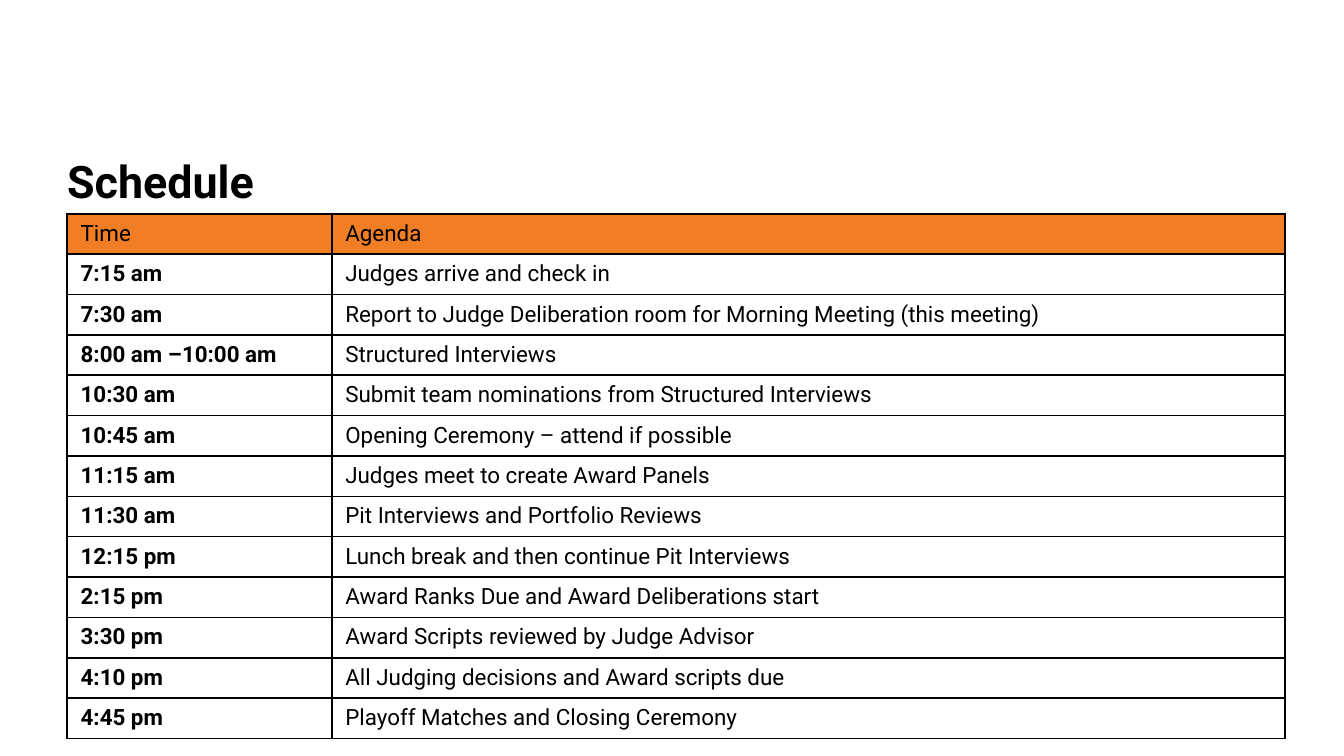
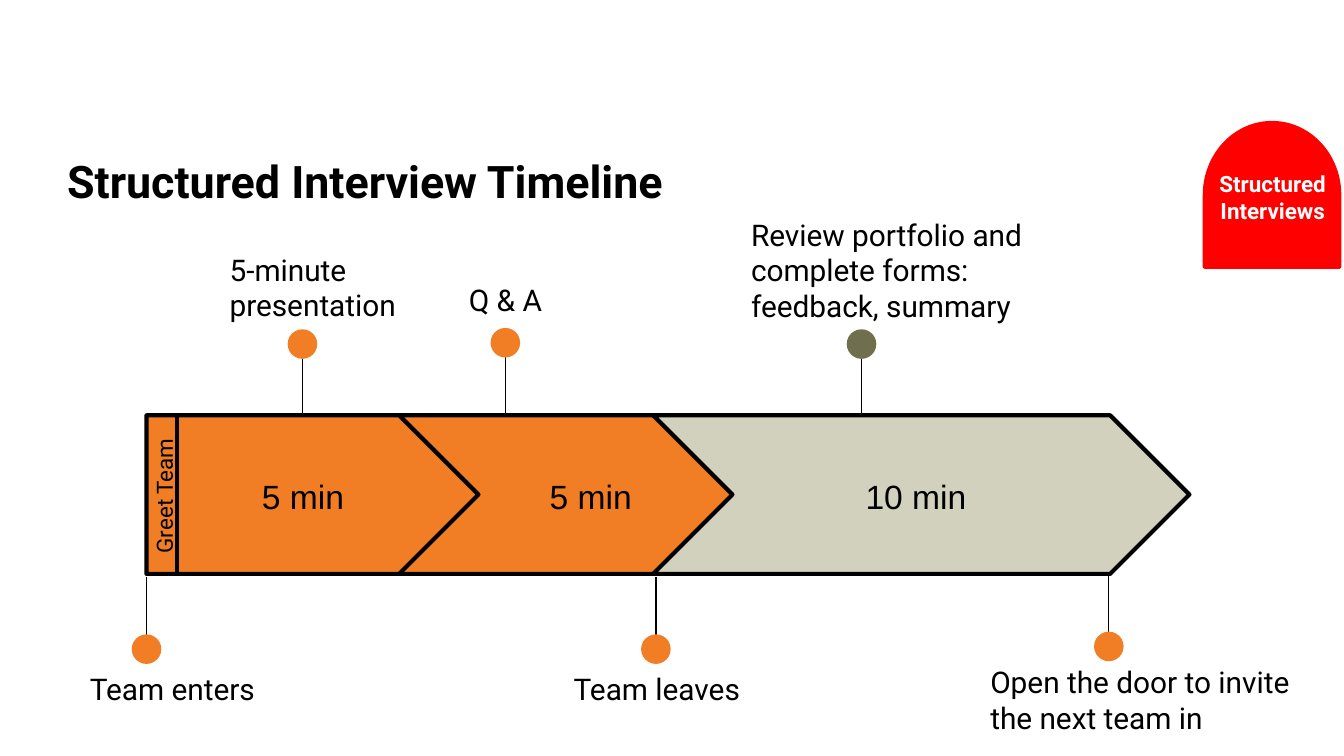
from lxml import etree
from pptx import Presentation
from pptx.dml.color import RGBColor
from pptx.enum.shapes import MSO_CONNECTOR, MSO_SHAPE
from pptx.enum.text import MSO_ANCHOR, PP_ALIGN
from pptx.oxml.ns import qn
from pptx.util import Inches, Pt

BLACK = RGBColor(0x00, 0x00, 0x00)
WHITE = RGBColor(0xFF, 0xFF, 0xFF)
ORANGE = RGBColor(0xF1, 0x7E, 0x25)
STONE = RGBColor(0xD2, 0xD1, 0xBE)
OLIVE = RGBColor(0x6F, 0x6F, 0x4E)
RED = RGBColor(0xFF, 0x00, 0x00)

STRAIGHT = MSO_CONNECTOR.STRAIGHT
CHEVRON, PENTAGON = MSO_SHAPE.CHEVRON, MSO_SHAPE.PENTAGON
OVAL, DELAY = MSO_SHAPE.OVAL, MSO_SHAPE.FLOWCHART_DELAY
LEFT, CENTER = PP_ALIGN.LEFT, PP_ALIGN.CENTER
TOP, MIDDLE = MSO_ANCHOR.TOP, MSO_ANCHOR.MIDDLE

COLS, ROWS = 100, 56.25  # grid cells are a tenth of an inch square
CELL = Inches(0.1)

AGENDA = [
    ("Time", "Agenda"),
    ("7:15 am", "Judges arrive and check in"),
    ("7:30 am", "Report to Judge Deliberation room for Morning Meeting (this meeting)"),
    ("8:00 am –10:00 am", "Structured Interviews"),
    ("10:30 am", "Submit team nominations from Structured Interviews"),
    ("10:45 am", "Opening Ceremony – attend if possible"),
    ("11:15 am", "Judges meet to create Award Panels"),
    ("11:30 am", "Pit Interviews and Portfolio Reviews"),
    ("12:15 pm", "Lunch break and then continue Pit Interviews"),
    ("2:15 pm", "Award Ranks Due and Award Deliberations start"),
    ("3:30 pm", "Award Scripts reviewed by Judge Advisor"),
    ("4:10 pm", "All Judging decisions and Award scripts due"),
    ("4:45 pm", "Playoff Matches and Closing Ceremony"),
]
AGENDA_HEIGHTS = [2.2] * 3 + [2.7, 2.5] + [2.2] * 8

BAR_TOP, BAR_HEIGHT = 30.9, 11.8
# shape, left, width, fill
PHASES = [
    (CHEVRON, 29.1, 25.5, ORANGE),
    (PENTAGON, 10.9, 24.7, ORANGE),
    (CHEVRON, 48.6, 39.9, STONE),
]
# left, text
DURATIONS = [(15.1, "5 min"), (36.5, "5 min"), (60.7, "10 min")]

DOWN, UP = 1, -1
# dot centre x and y, direction of its stem, colour
MARKERS = [
    (10.9, 48.3, UP, ORANGE),
    (22.5, 25.6, DOWN, ORANGE),
    (37.6, 25.5, DOWN, ORANGE),
    (48.8, 48.3, UP, ORANGE),
    (82.5, 48.1, UP, ORANGE),
    (64.1, 25.6, DOWN, OLIVE),
]
# text, left, top, width, height
LABELS = [
    ("5-minute presentation", 16.1, 18.2, 16.2, 9.1),
    ("Team enters", 5.7, 49.4, 16.2, 6.4),
    ("Q & A", 33.9, 20.5, 8.3, 6.4),
    ("Team leaves", 41.7, 49.4, 16.2, 6.4),
    ("Review portfolio and complete forms: feedback, summary", 54.9, 15.6, 23.6, 9.1),
    ("Open the door to invite the next team in", 72.7, 48.9, 24.3, 6.4),
]


def grid(*cells):
    return [round(c * CELL) for c in cells]


def write(tf, text, size=12, font="Roboto", color=BLACK, bold=False, align=LEFT):
    p = tf.paragraphs[0]
    p.alignment = align
    r = p.add_run()
    r.text = text
    r.font.size = Pt(size)
    r.font.name = font
    r.font.bold = bold
    r.font.color.rgb = color


def border(cell, width=1, color=BLACK):
    tc_pr = cell._tc.get_or_add_tcPr()
    for i, side in enumerate(("lnL", "lnR", "lnT", "lnB")):
        ln = etree.Element(qn(f"a:{side}"), w=str(Pt(width)))
        fill = etree.SubElement(ln, qn("a:solidFill"))
        etree.SubElement(fill, qn("a:srgbClr"), val=str(color))
        tc_pr.insert(i, ln)


class Deck:
    def __init__(self):
        self.prs = Presentation()
        self.prs.slide_width, self.prs.slide_height = grid(COLS, ROWS)
        self.s = None

    def slide(self, title):
        self.s = self.prs.slides.add_slide(self.prs.slide_layouts[6])
        self.text(title, 5, 10.4, 90.7, 6.1, inset=False, anchor=MIDDLE,
                  size=24, bold=True)

    def text(self, text, x, y, w, h, inset=True, anchor=TOP, rotation=0, **style):
        box = self.s.shapes.add_textbox(*grid(x, y, w, h))
        box.rotation = rotation
        tf = box.text_frame
        tf.word_wrap = True
        tf.vertical_anchor = anchor
        if not inset:
            tf.margin_left = tf.margin_right = tf.margin_top = tf.margin_bottom = 0
        write(tf, text, **style)

    def shape(self, kind, x, y, w, h, fill, line=None, rotation=0):
        sp = self.s.shapes.add_shape(kind, *grid(x, y, w, h))
        sp.shadow.inherit = False
        sp.rotation = rotation
        sp.fill.solid()
        sp.fill.fore_color.rgb = fill
        if line is None:
            sp.line.fill.background()
        else:
            sp.line.color.rgb = line
            sp.line.width = Pt(2.25)

    def line(self, x1, y1, x2, y2, width=0.75):
        c = self.s.shapes.add_connector(STRAIGHT, *grid(x1, y1, x2, y2))
        c.line.color.rgb = BLACK
        c.line.width = Pt(width)
        etree.SubElement(c._element.spPr, qn("a:effectLst"))

    def marker(self, x, y, direction, color, dot=2.2, stem=6):
        """Draw a dot with a stem that runs towards the bar."""
        start = y - direction * 0.65
        self.line(x, start, x, start + direction * stem)
        self.shape(OVAL, x - dot / 2, y - dot / 2, dot, dot, color)

    def table(self, rows, x, y, widths, heights, frame_height):
        """Draw a table with a filled header and a bold first column."""
        frame = self.s.shapes.add_table(
            len(rows), len(widths), *grid(x, y, sum(widths), frame_height))
        table = frame.table
        table.first_row = table.horz_banding = False
        for column, width in zip(table.columns, grid(*widths)):
            column.width = width
        for row, height in zip(table.rows, grid(*heights)):
            row.height = height
        frame.height = grid(frame_height)[0]
        for i, row in enumerate(rows):
            for j, text in enumerate(row):
                cell = table.cell(i, j)
                if i == 0:
                    cell.fill.solid()
                    cell.fill.fore_color.rgb = ORANGE
                else:
                    cell.fill.background()
                border(cell)
                write(cell.text_frame, text, bold=i > 0 and j == 0)


def schedule(deck):
    deck.slide("Schedule")
    deck.table(AGENDA, 5, 15.9, (19.7, 70.9), AGENDA_HEIGHTS, 39)


def timeline(deck):
    deck.slide("Structured Interview Timeline")
    for kind, x, width, fill in PHASES:
        deck.shape(kind, x, BAR_TOP, width, BAR_HEIGHT, fill, line=BLACK)
    for x, text in DURATIONS:
        deck.text(text, x, 34.9, 14.9, 4, size=18, font="Arial", align=CENTER)
    for marker in MARKERS:
        deck.marker(*marker)
    for label in LABELS:
        deck.text(*label, size=16)
    deck.line(13.2, BAR_TOP, 13.2, BAR_TOP + BAR_HEIGHT, width=2.25)
    deck.text("Greet Team", 5.1, 34.4, 16.2, 5, rotation=270, align=CENTER)
    deck.shape(DELAY, 89.3, 9.5, 10.7, 10, RED, line=RED, rotation=270)
    deck.text("Structured Interviews", 89.4, 12.2, 10.6, 5,
              color=WHITE, bold=True, align=CENTER)


def main():
    deck = Deck()
    schedule(deck)
    timeline(deck)
    deck.prs.save("out.pptx")


if __name__ == "__main__":
    main()
